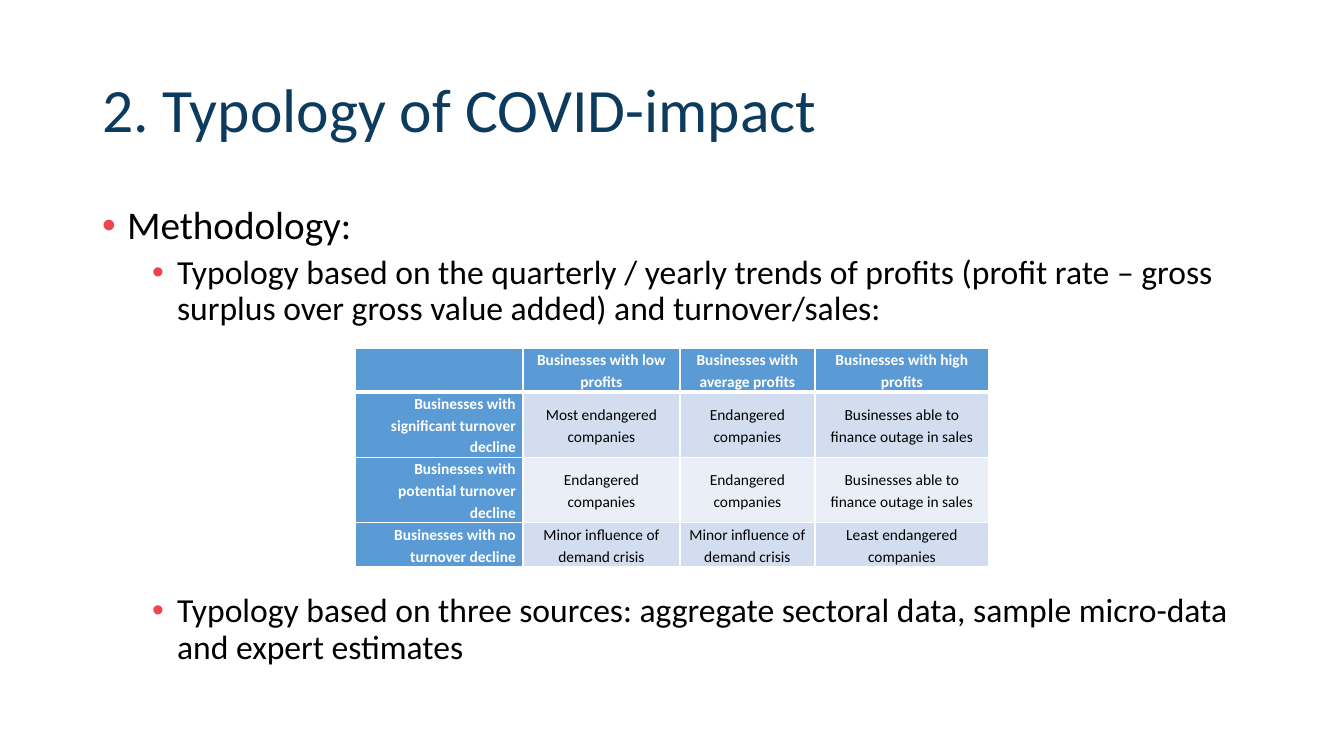
from lxml.etree import SubElement
from pptx import Presentation
from pptx.dml.color import RGBColor
from pptx.enum.text import MSO_ANCHOR as Anchor, MSO_AUTO_SIZE as AutoSize, PP_ALIGN as Align
from pptx.oxml.ns import qn
from pptx.util import Pt

EMU_PER_PX = 914400 / 100.8
COLORS = {"title": "0D3B5E", "bullet": "EF4350", "text": "000000", "white": "FFFFFF",
          "header": "5B9BD5", "odd": "D2DEEF", "even": "EAEFF7"}
POINTS = [
    (0, "Methodology:", 28, 0),
    (1, "Typology based on the quarterly / yearly trends of profits (profit rate – gross "
        "surplus over gross value added) and turnover/sales:", 24, 5),
    (1, "Typology based on three sources: aggregate sectoral data, sample micro-data "
        "and expert estimates", 24, 190),
]
TYPOLOGY = [
    ["", "Businesses with low profits", "Businesses with average profits",
     "Businesses with high profits"],
    ["Businesses with significant turnover decline", "Most endangered companies",
     "Endangered companies", "Businesses able to finance outage in sales"],
    ["Businesses with potential turnover decline", "Endangered companies",
     "Endangered companies", "Businesses able to finance outage in sales"],
    ["Businesses with no turnover decline", "Minor influence of demand crisis",
     "Minor influence of demand crisis", "Least endangered companies"],
]
COLUMN_WIDTHS = [168, 157, 135, 174]
ROW_HEIGHTS = [43, 65, 65, 43]


def px(length):
    """Turn pixels into EMU."""
    return round(length * EMU_PER_PX)


def place(part, box):
    """Move a part to its box."""
    part.left, part.top, part.width, part.height = map(px, box)


def style(paragraph, size, color, bold=False):
    """Set the font of a whole paragraph."""
    font = paragraph.font
    font.name, font.size, font.bold = "Calibri", Pt(size), bold
    font.color.rgb = RGBColor.from_string(COLORS[color])


def add_bullet(paragraph, left, hanging):
    """Give a paragraph a coloured bullet and its indent."""
    properties = paragraph._p.get_or_add_pPr()
    properties.set("marL", str(px(left)))
    properties.set("indent", str(-px(hanging)))
    color = SubElement(properties, qn("a:buClr"))
    SubElement(color, qn("a:srgbClr"), val=COLORS["bullet"])
    SubElement(properties, qn("a:buFont"), typeface="Arial")
    SubElement(properties, qn("a:buChar"), char="•")


def set_borders(cell, bottom_width):
    """Draw white lines around a cell."""
    properties = cell._tc.get_or_add_tcPr()
    for index, side in enumerate(("lnL", "lnR", "lnT", "lnB")):
        width = Pt(bottom_width if side == "lnB" else 1)
        line = properties.makeelement(qn(f"a:{side}"), {"w": str(width)})
        fill = SubElement(line, qn("a:solidFill"))
        SubElement(fill, qn("a:srgbClr"), val=COLORS["white"])
        properties.insert(index, line)


def fill_title(title, box):
    """Write the slide title."""
    place(title, box)
    frame = title.text_frame
    frame.text = "2. Typology of COVID-impact"
    frame.vertical_anchor = Anchor.MIDDLE
    frame.auto_size = AutoSize.NONE
    heading = frame.paragraphs[0]
    heading.alignment = Align.LEFT
    heading.line_spacing = 0.9
    style(heading, 44, "title")


def fill_points(body, box):
    """Write the bulleted points, leaving room for the table."""
    place(body, box)
    frame = body.text_frame
    frame.auto_size = AutoSize.NONE
    frame.text = "\n".join(text for _, text, _, _ in POINTS)
    for point, (level, _, size, space) in zip(frame.paragraphs, POINTS):
        point.level = level
        add_bullet(point, 25 + 50 * level, 25)
        point.line_spacing = 0.9
        point.space_before = Pt(space)
        style(point, size, "text")


def add_typology(slide, box):
    """Add the table of turnover against profits."""
    table = slide.shapes.add_table(len(TYPOLOGY), len(TYPOLOGY[0]), *map(px, box)).table
    for column, width in zip(table.columns, COLUMN_WIDTHS):
        column.width = px(width)
    for row, height in zip(table.rows, ROW_HEIGHTS):
        row.height = px(height)
    for r, texts in enumerate(TYPOLOGY):
        for c, text in enumerate(texts):
            heading = r == 0 or c == 0
            cell = table.cell(r, c)
            cell.margin_left = cell.margin_right = px(7)
            cell.margin_top = cell.margin_bottom = 0
            cell.vertical_anchor = Anchor.TOP if heading else Anchor.MIDDLE
            cell.fill.solid()
            band = "header" if heading else "odd" if r % 2 else "even"
            cell.fill.fore_color.rgb = RGBColor.from_string(COLORS[band])
            set_borders(cell, 1 if r else 3)
            cell.text = text
            label = cell.text_frame.paragraphs[0]
            label.alignment = Align.RIGHT if c == 0 else Align.CENTER
            label.line_spacing = 1.15
            style(label, 11, "white" if heading else "text", heading)


def main():
    """Build and save the slide."""
    deck = Presentation()
    deck.slide_width, deck.slide_height = px(1344), px(756)
    slide = deck.slides.add_slide(deck.slide_layouts[1])
    fill_title(slide.shapes.title, (92, 40, 1159, 146))
    fill_points(slide.placeholders[1], (92, 201, 1159, 480))
    add_typology(slide, (355, 348, sum(COLUMN_WIDTHS), sum(ROW_HEIGHTS)))
    deck.save("out.pptx")


if __name__ == "__main__":
    main()
